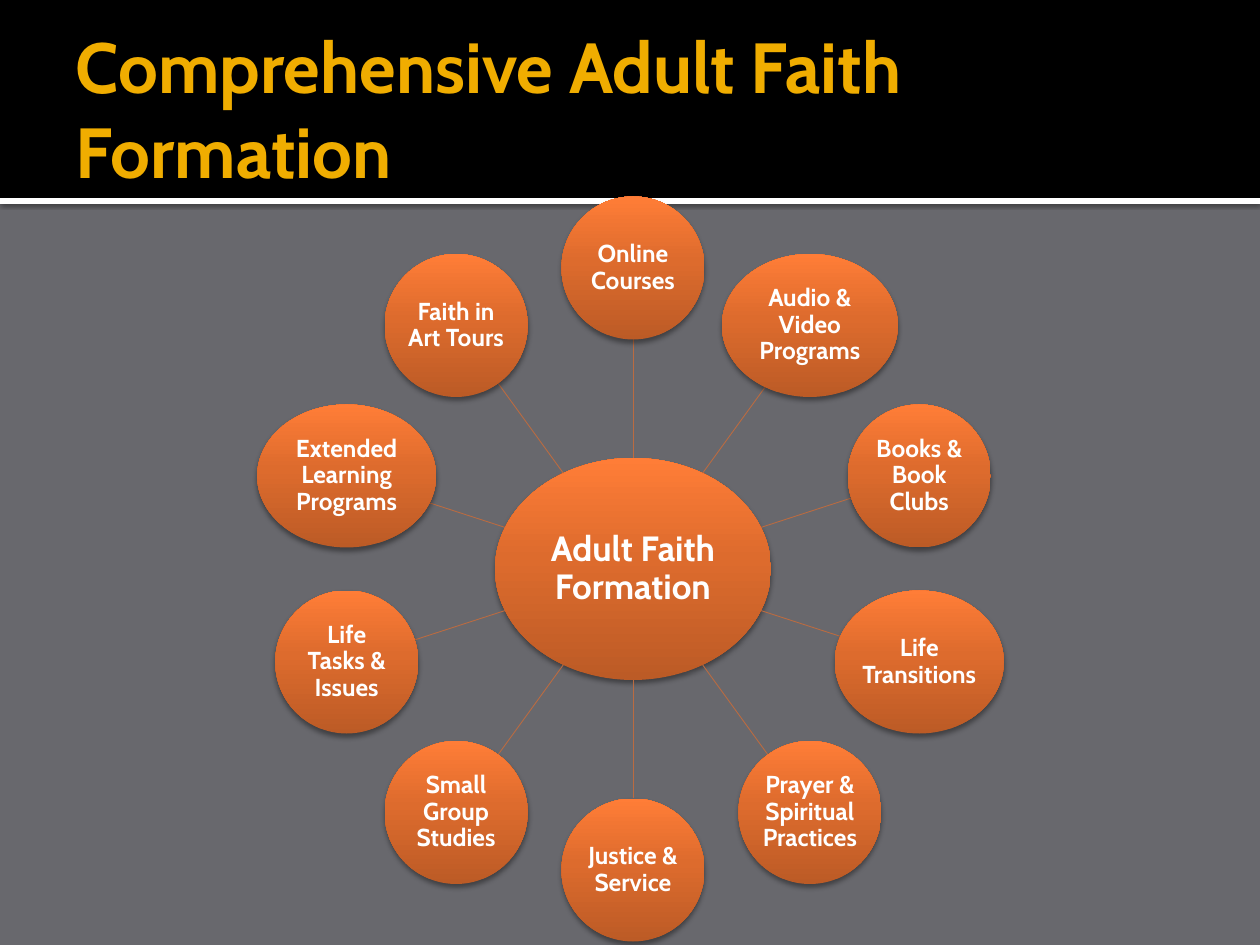
import math
from copy import deepcopy
from dataclasses import dataclass

from lxml import etree
from pptx import Presentation
from pptx.dml.color import RGBColor
from pptx.enum.shapes import MSO_CONNECTOR, MSO_SHAPE
from pptx.enum.text import MSO_ANCHOR, MSO_AUTO_SIZE, PP_ALIGN
from pptx.oxml.ns import qn
from pptx.util import Emu, Pt

RECTANGLE, ELLIPSE = MSO_SHAPE.RECTANGLE, MSO_SHAPE.OVAL
STRAIGHT = MSO_CONNECTOR.STRAIGHT
MIDDLE = MSO_ANCHOR.MIDDLE
LEFT, CENTER = PP_ALIGN.LEFT, PP_ALIGN.CENTER
NO_AUTOFIT = MSO_AUTO_SIZE.NONE
TITLE_ONLY = 5
PX_PER_INCH = 126


@dataclass(frozen=True)
class Theme:
    font: str = "Cabin"
    background: str = "68686D"
    band: str = "000000"
    rule: str = "FFFFFF"
    title: str = "F0AD00"
    text: str = "FFFFFF"
    spoke: str = "BA6B41"
    gradient: tuple = ((0, "BC5B26"), (0.55, "DD6B2D"), (1, "FF7D37"))
    title_size: float = 40.5
    hub_size: float = 20
    node_size: float = 14


THEME = Theme()

# Hub and ring geometry in px
CENTER_X, CENTER_Y = 633, 569
HUB_WIDTH, HUB_HEIGHT = 276, 222
RING_RADIUS = 301
NODE_HEIGHT = 143

# Label and width of each node, clockwise from the top
NODES = [
    ("Online Courses", 143),
    ("Audio & Video Programs", 176),
    ("Books & Book Clubs", 143),
    ("Life Transitions", 169),
    ("Prayer & Spiritual Practices", 143),
    ("Justice & Service", 143),
    ("Small Group Studies", 143),
    ("Life Tasks & Issues", 143),
    ("Extended Learning Programs", 179),
    ("Faith in Art Tours", 143),
]


def px(length):
    return Emu(round(length * 914400 / PX_PER_INCH))


def color(value):
    return RGBColor.from_string(value)


def add_shadow(shape, blur, distance, opacity):
    """Give the shape a black shadow that falls straight down."""
    shape.shadow.inherit = False
    effects = shape._element.spPr.find(qn("a:effectLst"))
    shadow = etree.SubElement(
        effects, qn("a:outerShdw"), blurRad=str(Pt(blur)), dist=str(Pt(distance)),
        dir="5400000", algn="ctr", rotWithShape="0")
    black = etree.SubElement(shadow, qn("a:srgbClr"), val="000000")
    etree.SubElement(black, qn("a:alpha"), val=str(opacity * 1000))


def set_gradient(shape):
    """Fill the shape with the theme gradient, from bottom to top."""
    shape.fill.gradient()
    shape.fill.gradient_angle = 90
    stop_list = shape._element.spPr.find(qn("a:gradFill")).find(qn("a:gsLst"))
    stop_list.append(deepcopy(stop_list[-1]))
    for stop, (position, value) in zip(shape.fill.gradient_stops, THEME.gradient):
        stop.position = position
        stop.color.rgb = color(value)


def set_text(shape, text, size, text_color, alignment, insets):
    frame = shape.text_frame
    frame.text = text
    frame.word_wrap = True
    frame.auto_size = NO_AUTOFIT
    frame.vertical_anchor = MIDDLE
    (frame.margin_left, frame.margin_top,
     frame.margin_right, frame.margin_bottom) = map(px, insets)
    paragraph = frame.paragraphs[0]
    paragraph.alignment = alignment
    font = paragraph.font
    font.name, font.size, font.bold = THEME.font, Pt(size), True
    font.color.rgb = color(text_color)
    return paragraph


def add_band(slide, top, height, fill):
    band = slide.shapes.add_shape(RECTANGLE, 0, px(top), px(1260), px(height))
    band.fill.solid()
    band.fill.fore_color.rgb = color(fill)
    band.line.fill.background()
    band.shadow.inherit = False
    return band


def place_title(slide, text):
    title = slide.shapes.title
    title.left, title.top, title.width, title.height = map(px, (63, 21, 1134, 173))
    set_text(title, text, THEME.title_size, THEME.title, LEFT, (13, 6, 6, 6))
    # Bring the title in front of the header bands
    slide.shapes._spTree.append(title._element)


def add_bubble(slide, text, center_x, center_y, width, height, size):
    bubble = slide.shapes.add_shape(
        ELLIPSE, px(center_x - width / 2), px(center_y - height / 2),
        px(width), px(height))
    set_gradient(bubble)
    bubble.line.fill.background()
    add_shadow(bubble, blur=3.1, distance=2, opacity=38)
    paragraph = set_text(bubble, text, size, THEME.text, CENTER, (1, 1, 1, 1))
    paragraph.line_spacing = 0.9


def edge_distance(width, height, across, down):
    """Distance from an ellipse's center to its edge along a unit direction."""
    return 1 / math.hypot(2 * across / width, 2 * down / height)


def add_spoke(slide, across, down, start, end):
    spoke = slide.shapes.add_connector(
        STRAIGHT,
        px(CENTER_X + across * start), px(CENTER_Y + down * start),
        px(CENTER_X + across * end), px(CENTER_Y + down * end))
    spoke.line.color.rgb = color(THEME.spoke)
    spoke.line.width = Pt(0.5)
    etree.SubElement(spoke._element.spPr, qn("a:effectLst"))


def add_wheel(slide):
    add_bubble(slide, "Adult Faith Formation", CENTER_X, CENTER_Y,
               HUB_WIDTH, HUB_HEIGHT, THEME.hub_size)
    for index, (label, width) in enumerate(NODES):
        angle = 2 * math.pi * index / len(NODES)
        across, down = math.sin(angle), -math.cos(angle)
        start = edge_distance(HUB_WIDTH, HUB_HEIGHT, across, down)
        end = RING_RADIUS - edge_distance(width, NODE_HEIGHT, across, down)
        add_spoke(slide, across, down, start, end)
        add_bubble(slide, label, CENTER_X + RING_RADIUS * across,
                   CENTER_Y + RING_RADIUS * down, width, NODE_HEIGHT,
                   THEME.node_size)


def main():
    presentation = Presentation()
    presentation.slide_width, presentation.slide_height = px(1260), px(945)
    slide = presentation.slides.add_slide(presentation.slide_layouts[TITLE_ONLY])
    slide.background.fill.solid()
    slide.background.fill.fore_color.rgb = color(THEME.background)

    # Header: white rule below a black band
    rule = add_band(slide, 198, 6, THEME.rule)
    add_shadow(rule, blur=2.5, distance=0.8, opacity=60)
    add_band(slide, 0, 198, THEME.band)
    place_title(slide, "Comprehensive Adult Faith Formation")

    # Hub with its ring of nodes
    add_wheel(slide)
    presentation.save("out.pptx")


if __name__ == "__main__":
    main()
